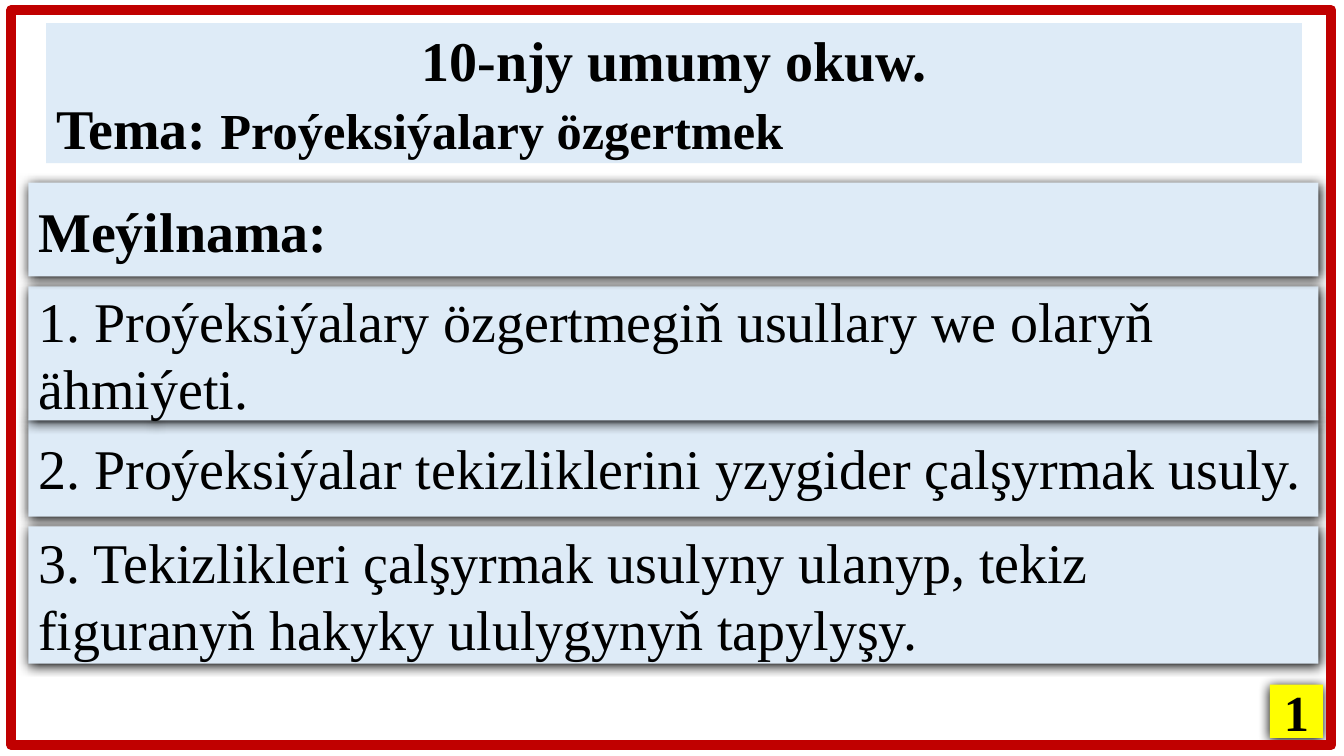
from dataclasses import dataclass

from lxml import etree
from pptx import Presentation
from pptx.dml.color import RGBColor
from pptx.enum.shapes import MSO_SHAPE
from pptx.enum.text import MSO_ANCHOR, MSO_AUTO_SIZE, PP_ALIGN
from pptx.oxml.ns import qn
from pptx.util import Pt

RECTANGLE = MSO_SHAPE.RECTANGLE
MIDDLE = MSO_ANCHOR.MIDDLE
NO_AUTOFIT = MSO_AUTO_SIZE.NONE
LEFT, CENTER = PP_ALIGN.LEFT, PP_ALIGN.CENTER
COMPARISON_LAYOUT = 4  # a title and four text placeholders


@dataclass(frozen=True)
class Theme:
    font: str = "Times New Roman"
    large: int = 40
    medium: int = 36
    text: str = "000000"
    panel: str = "DEEBF7"
    badge: str = "FFFF00"
    frame: str = "C00000"
    shadow: str = "000000"


class SlideBuilder:
    def __init__(self, slide, theme):
        self.slide = slide
        self.theme = theme

    def place(self, shape, left, top, width, height):
        shape.left, shape.top = Pt(left), Pt(top)
        shape.width, shape.height = Pt(width), Pt(height)

    def fill(self, shape, color):
        shape.fill.solid()
        shape.fill.fore_color.rgb = RGBColor.from_string(color)
        shape.line.fill.background()

    def add_shadow(self, shape):
        shape.shadow.inherit = False
        effects = shape.element.spPr.find(qn("a:effectLst"))
        shadow = etree.SubElement(
            effects, qn("a:outerShdw"), blurRad=str(Pt(8.5)), dist=str(Pt(1)),
            dir="5400000", algn="t", rotWithShape="0")
        etree.SubElement(shadow, qn("a:srgbClr"), val=self.theme.shadow)

    def set_text(self, shape, paragraphs):
        """Each paragraph is (alignment, runs); each run is (text, size, bold)."""
        frame = shape.text_frame
        frame.word_wrap = True
        frame.auto_size = NO_AUTOFIT
        frame.vertical_anchor = MIDDLE
        for index, (alignment, runs) in enumerate(paragraphs):
            paragraph = frame.add_paragraph() if index else frame.paragraphs[0]
            paragraph.alignment = alignment
            paragraph.space_before = Pt(0)
            properties = paragraph._p.get_or_add_pPr()
            properties.set("marL", "0")
            properties.set("indent", "0")
            etree.SubElement(properties, qn("a:buNone"))
            for text, size, bold in runs:
                run = paragraph.add_run()
                run.text = text
                run.font.name = self.theme.font
                run.font.size = Pt(size)
                run.font.bold = bold
                run.font.color.rgb = RGBColor.from_string(self.theme.text)

    def title(self, box, paragraphs):
        shape = self.slide.shapes.title
        self.place(shape, *box)
        self.fill(shape, self.theme.panel)
        self.set_text(shape, paragraphs)

    def panel(self, placeholder_index, box, text, bold):
        shape = self.slide.placeholders[placeholder_index]
        self.place(shape, *box)
        self.fill(shape, self.theme.panel)
        self.add_shadow(shape)
        self.set_text(shape, [(LEFT, [(text, self.theme.large, bold)])])

    def badge(self, box, text):
        shape = self.slide.shapes.add_shape(RECTANGLE, *map(Pt, box))
        self.fill(shape, self.theme.badge)
        self.add_shadow(shape)
        self.set_text(shape, [(CENTER, [(text, self.theme.medium, True)])])

    def frame(self, box, weight):
        shape = self.slide.shapes.add_shape(RECTANGLE, *map(Pt, box))
        shape.shadow.inherit = False
        shape.fill.background()
        shape.line.color.rgb = RGBColor.from_string(self.theme.frame)
        shape.line.width = Pt(weight)


def main():
    presentation = Presentation()
    presentation.slide_width, presentation.slide_height = Pt(960), Pt(540)
    slide = presentation.slides.add_slide(
        presentation.slide_layouts[COMPARISON_LAYOUT])
    theme = Theme()
    builder = SlideBuilder(slide, theme)

    # Lecture number and topic
    builder.title((33, 16.5, 897, 100), [
        (CENTER, [("10-njy umumy okuw.", theme.large, True)]),
        (LEFT, [("Tema: ", theme.large, True),
                ("Proýeksiýalary özgertmek", theme.medium, True)]),
    ])

    # Agenda panels, back to front: top, height, text, bold
    panels = [
        (299, 70, "2. Proýeksiýalar tekizliklerini yzygider çalşyrmak usuly.", False),
        (204.5, 95.8, "1. Proýeksiýalary özgertmegiň usullary we olaryň ähmiýeti.", False),
        (130.5, 67, "Meýilnama:", True),
        (376, 98, "3. Tekizlikleri çalşyrmak usulyny ulanyp, tekiz figuranyň "
                  "hakyky ululygynyň tapylyşy.", False),
    ]
    for index, (top, height, text, bold) in enumerate(panels, start=1):
        builder.panel(index, (20.2, top, 921.6, height), text, bold)

    # Page number and border
    builder.badge((907, 489, 38, 38), "1")
    builder.frame((8, 7.2, 943, 525), 7)

    presentation.save("out.pptx")


if __name__ == "__main__":
    main()
